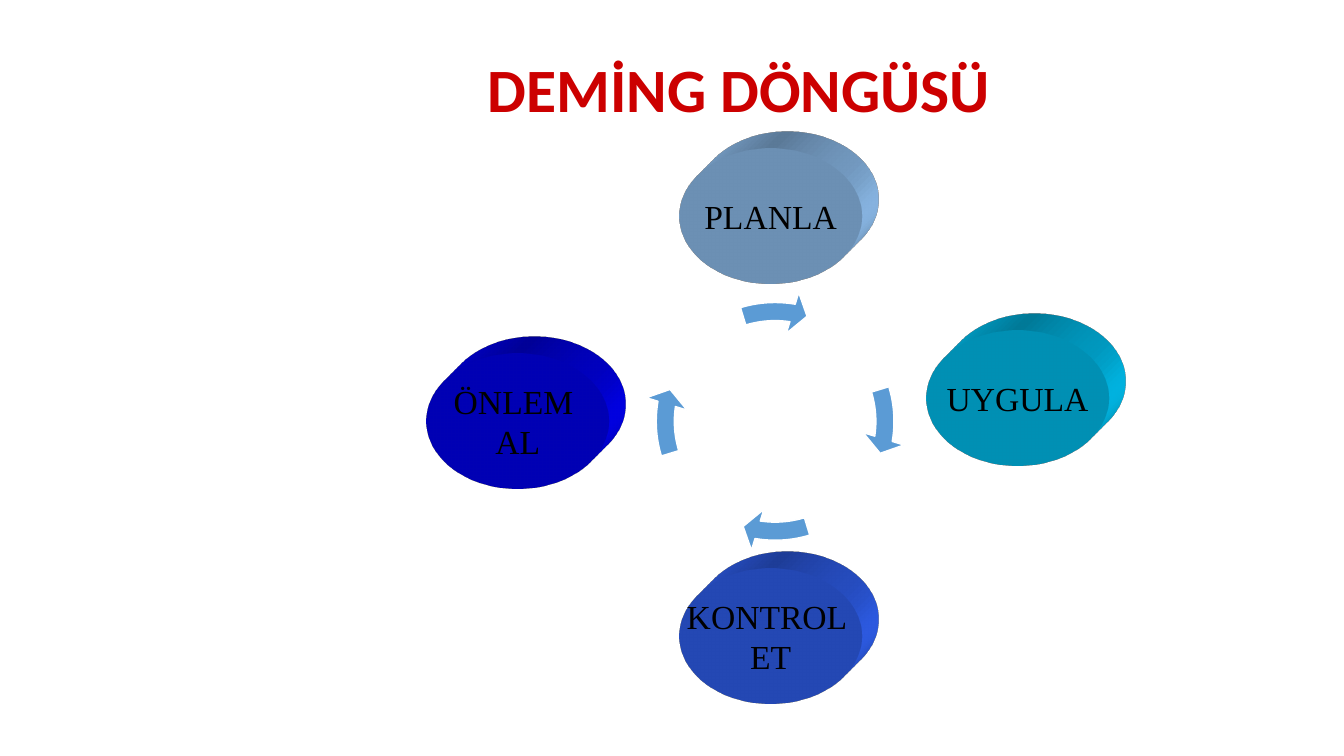
"""Build the Deming cycle slide: four extruded ellipses around four circular arrows."""
from lxml import etree
from pptx import Presentation
from pptx.dml.color import RGBColor
from pptx.enum.shapes import MSO_SHAPE
from pptx.enum.text import MSO_ANCHOR, PP_ALIGN
from pptx.util import Pt

ELLIPSE = MSO_SHAPE.OVAL
ARROW = MSO_SHAPE.CIRCULAR_ARROW
CENTER = PP_ALIGN.CENTER
MIDDLE = MSO_ANCHOR.MIDDLE

COLORS = {
    "title": "CC0000", "text": "000000", "arrow": "5B9BD5", "outline": "FFFFFF",
    "plan": "99CCFF", "do": "00CCFF", "check": "3366FF", "act": "0000FF",
}
TITLE = "DEMİNG DÖNGÜSÜ"
STEPS = [
    ("PLANLA", "plan", 485.3, 105.8),
    ("UYGULA", "do", 661.7, 236.2),
    ("KONTROL \nET", "check", 485.3, 406.1),
    ("ÖNLEM \nAL", "act", 304.6, 252.7),
]
ELLIPSE_SIZE = (130.3, 96.5)
RING = (460.1, 207.4, 187.2)
ARROW_WIDTH, ARROW_HEAD, ARROW_END, ARROW_START, ARROW_INSET = 0.069, 4.654, 5.49, 205.855, 0.081
FULL_TURN = 216
DRAWING = "http://schemas.openxmlformats.org/drawingml/2006/main"
EXTRUSION = """<a:spPr xmlns:a="{drawing}">
<a:scene3d><a:camera prst="legacyObliqueTopRight"/><a:lightRig rig="legacyFlat3" dir="b"/></a:scene3d>
<a:sp3d extrusionH="430200" prstMaterial="legacyMatte">
<a:bevelT w="13500" h="13500" prst="angle"/><a:bevelB w="13500" h="13500" prst="angle"/>
<a:extrusionClr><a:srgbClr val="{color}"/></a:extrusionClr></a:sp3d></a:spPr>"""


def color(name):
    return RGBColor.from_string(COLORS[name])


def format_text(text_frame, font_name, size, color_name, bold=False):
    text_frame.vertical_anchor = MIDDLE
    for paragraph in text_frame.paragraphs:
        paragraph.alignment = CENTER
        for run in paragraph.runs:
            run.font.name = font_name
            run.font.size = Pt(size)
            run.font.bold = bold
            run.font.color.rgb = color(color_name)


def add_filled_shape(slide, kind, left, top, width, height, fill_name):
    shape = slide.shapes.add_shape(kind, Pt(left), Pt(top), Pt(width), Pt(height))
    shape.shadow.inherit = False
    shape.fill.solid()
    shape.fill.fore_color.rgb = color(fill_name)
    return shape


def add_title(slide):
    title = slide.shapes.title
    title.left, title.top, title.width, title.height = Pt(168), Pt(30), Pt(720), Pt(72)
    title.text_frame.text = TITLE
    title.text_frame.paragraphs[0].line_spacing = 0.9
    format_text(title.text_frame, "Calibri", 44, "title", True)


def add_step(slide, text, fill_name, left, top):
    ellipse = add_filled_shape(slide, ELLIPSE, left, top, *ELLIPSE_SIZE, fill_name)
    ellipse.line.fill.background()
    for element in list(etree.fromstring(EXTRUSION.format(drawing=DRAWING, color=COLORS[fill_name]))):
        ellipse.element.spPr.append(element)
    ellipse.text_frame.text = text
    ellipse.text_frame.word_wrap = False
    format_text(ellipse.text_frame, "Times New Roman", 24, "text")


def add_arrow(slide, index):
    left, top, size = RING
    arrow = add_filled_shape(slide, ARROW, left, top, size, size, "arrow")
    arrow.line.color.rgb = color("outline")
    arrow.line.width = Pt(1)
    turn = index * FULL_TURN / len(STEPS)
    values = (ARROW_WIDTH, ARROW_HEAD, ARROW_END + turn, (ARROW_START + turn) % FULL_TURN, ARROW_INSET)
    for position, value in enumerate(values):
        arrow.adjustments[position] = value


def main():
    presentation = Presentation()
    presentation.slide_width, presentation.slide_height = Pt(960), Pt(540)
    slide = presentation.slides.add_slide(presentation.slide_layouts[5])
    add_title(slide)
    for step in STEPS:
        add_step(slide, *step)
    for index in range(len(STEPS)):
        add_arrow(slide, index)
    presentation.save("out.pptx")


if __name__ == "__main__":
    main()
